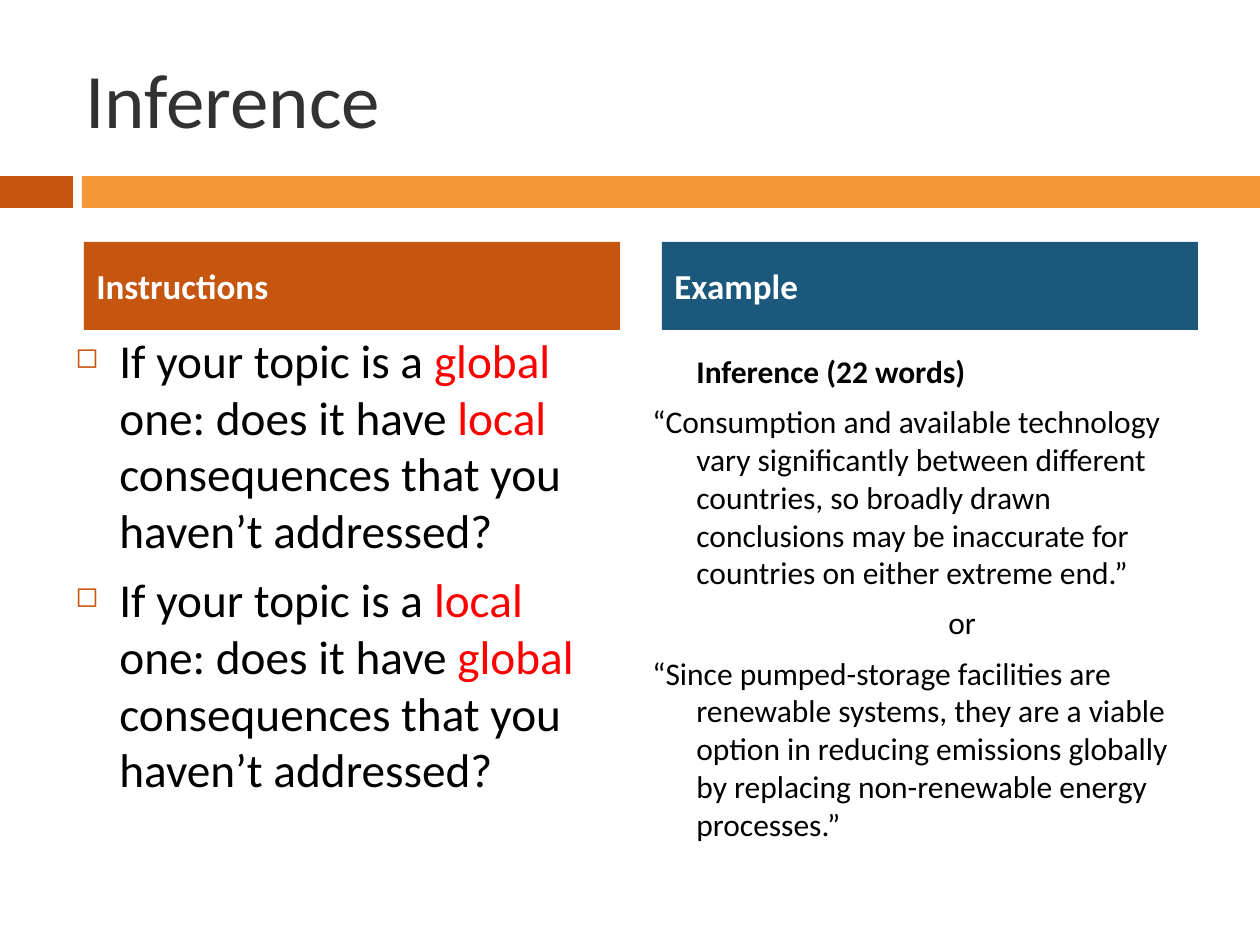
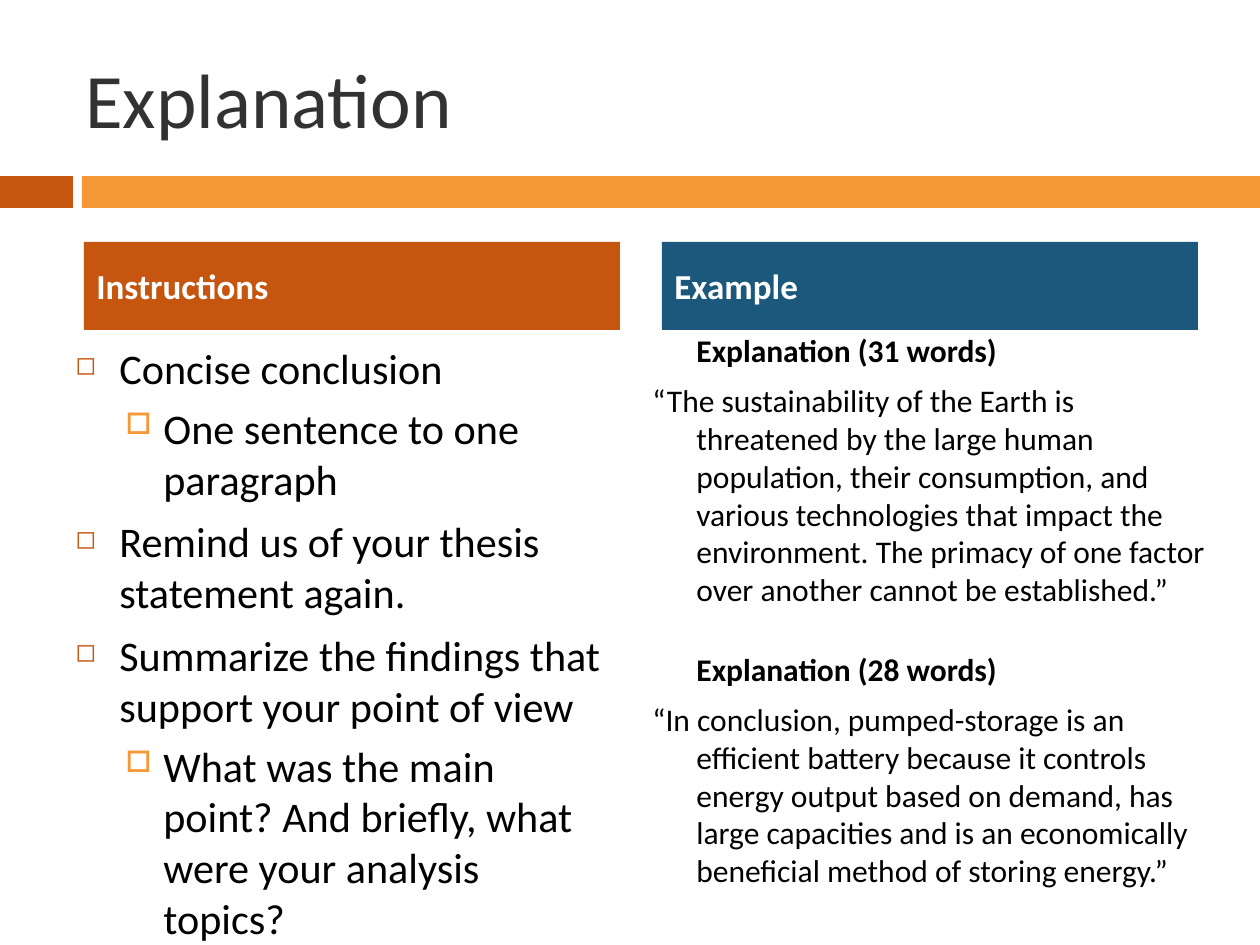
from lxml import etree
from pptx import Presentation
from pptx.dml.color import RGBColor
from pptx.enum.shapes import MSO_SHAPE
from pptx.enum.text import MSO_ANCHOR
from pptx.oxml.ns import qn
from pptx.util import Pt

EMU_PER_PX = 914400 / 126
SLIDE_WIDTH, SLIDE_HEIGHT = 1260, 945
RECTANGLE = MSO_SHAPE.RECTANGLE
TOP, MIDDLE = MSO_ANCHOR.TOP, MSO_ANCHOR.MIDDLE

FONT = "Calibri"
RUST = RGBColor(0xC6, 0x55, 0x10)
ORANGE = RGBColor(0xF7, 0x98, 0x38)
BLUE = RGBColor(0x1B, 0x58, 0x7C)
CHARCOAL = RGBColor(0x32, 0x32, 0x32)
BLACK = RGBColor(0, 0, 0)
WHITE = RGBColor(0xFF, 0xFF, 0xFF)
RED = RGBColor(0xFF, 0, 0)

# Shared boxes: left, top, width, height in px
TITLE_BOX = (73, 38, 1124, 120)
BANDS = [((0, 176, 73, 32), RUST), ((82, 176, 1178, 32), ORANGE)]
HEADERS = [
    ("Instructions", (84, 242, 536, 88), RUST),
    ("Example", (662, 242, 536, 88), BLUE),
]

# Bullet levels: left margin, hanging indent, space before, character, colour, size %
BULLETS = [
    (44, 44, 7, "◻", RUST, 60),
    (88, 38, 5.5, "□", ORANGE, 70),
]

# Example paragraph styles: left margin, hanging indent, space before, bold
EXAMPLE_STYLES = {
    "heading": (44, 0, 7, True),
    "next heading": (44, 0, 24, True),
    "quote": (44, 44, 7, False),
    "or": (296, 0, 7, False),
}


def px(length):
    return round(length * EMU_PER_PX)


def add_rectangle(slide, box, color):
    shape = slide.shapes.add_shape(RECTANGLE, *map(px, box))
    shape.shadow.inherit = False
    shape.fill.solid()
    shape.fill.fore_color.rgb = color
    shape.line.fill.background()
    return shape


def add_text_frame(slide, box, anchor=TOP):
    frame = slide.shapes.add_textbox(*map(px, box)).text_frame
    frame.word_wrap = True
    frame.vertical_anchor = anchor
    return frame


def next_paragraph(frame, index):
    return frame.add_paragraph() if index else frame.paragraphs[0]


def set_font(paragraph, size, color, bold=False):
    font = paragraph.font
    font.name, font.size, font.bold = FONT, Pt(size), bold
    font.color.rgb = color


def set_indent(paragraph, margin, hanging, space_before):
    paragraph.space_before = Pt(space_before)
    properties = paragraph._p.get_or_add_pPr()
    properties.set("marL", str(px(margin)))
    properties.set("indent", str(-px(hanging)))


def set_bullet(paragraph, character, color, percent):
    properties = paragraph._p.get_or_add_pPr()
    bullet_color = etree.SubElement(properties, qn("a:buClr"))
    etree.SubElement(bullet_color, qn("a:srgbClr"), val=str(color))
    etree.SubElement(properties, qn("a:buSzPct"), val=str(percent * 1000))
    etree.SubElement(properties, qn("a:buChar"), char=character)


def add_frame(slide, title):
    """Bands, title and the two column headers."""
    for box, color in BANDS:
        add_rectangle(slide, box, color)

    paragraph = add_text_frame(slide, TITLE_BOX, MIDDLE).paragraphs[0]
    paragraph.text = title
    set_font(paragraph, 44, CHARCOAL)

    for label, box, color in HEADERS:
        frame = add_rectangle(slide, box, color).text_frame
        frame.vertical_anchor = MIDDLE
        paragraph = frame.paragraphs[0]
        paragraph.text = label
        set_indent(paragraph, 0, 0, 5.8)
        paragraph.alignment = 1
        set_font(paragraph, 20, WHITE, bold=True)


def add_instructions(slide, box, size, items):
    """Bulleted list; each item is a level and pieces, every second piece red."""
    frame = add_text_frame(slide, box)
    for index, (level, *pieces) in enumerate(items):
        margin, hanging, space_before, character, color, percent = BULLETS[level]
        paragraph = next_paragraph(frame, index)
        paragraph.level = level
        set_indent(paragraph, margin, hanging, space_before)
        set_bullet(paragraph, character, color, percent)
        set_font(paragraph, size, BLACK)
        for position, piece in enumerate(pieces):
            run = paragraph.add_run()
            run.text = piece
            if position % 2:
                run.font.color.rgb = RED


def add_example(slide, box, items):
    """Headings and quotations with hanging indents."""
    frame = add_text_frame(slide, box)
    for index, (style, text) in enumerate(items):
        margin, hanging, space_before, bold = EXAMPLE_STYLES[style]
        paragraph = next_paragraph(frame, index)
        paragraph.text = text
        set_indent(paragraph, margin, hanging, space_before)
        set_font(paragraph, 18, BLACK, bold)


def add_inference_slide(slide):
    add_frame(slide, "Inference")
    add_instructions(slide, (63, 325, 557, 588), 27, [
        (0, "If your topic is a ", first, " one: does it have ", second,
         " consequences that you haven’t addressed?")
        for first, second in [("global", "local"), ("local", "global")]
    ])
    add_example(slide, (640, 346, 557, 557), [
        ("heading", "Inference (22 words)"),
        ("quote", "“Consumption and available technology vary significantly between "
                  "different countries, so broadly drawn conclusions may be inaccurate "
                  "for countries on either extreme end.”"),
        ("or", "or"),
        ("quote", "“Since pumped-storage facilities are renewable systems, they are a "
                  "viable option in reducing emissions globally by replacing "
                  "non-renewable energy processes.”"),
    ])


def add_explanation_slide(slide):
    add_frame(slide, "Explanation")
    add_instructions(slide, (63, 336, 557, 577), 24.1, [
        (0, "Concise conclusion"),
        (1, "One sentence to one paragraph"),
        (0, "Remind us of your thesis statement again."),
        (0, "Summarize the findings that support your point of view"),
        (1, "What was the main point? And briefly, what were your analysis topics?"),
    ])
    add_example(slide, (640, 325, 588, 557), [
        ("heading", "Explanation (31 words)"),
        ("quote", "“The sustainability of the Earth is threatened by the large human "
                  "population, their consumption, and various technologies that impact "
                  "the environment. The primacy of one factor over another cannot be "
                  "established.”"),
        ("next heading", "Explanation (28 words)"),
        ("quote", "“In conclusion, pumped-storage is an efficient battery because it "
                  "controls energy output based on demand, has large capacities and is "
                  "an economically beneficial method of storing energy.”"),
    ])


def main():
    presentation = Presentation()
    presentation.slide_width = px(SLIDE_WIDTH)
    presentation.slide_height = px(SLIDE_HEIGHT)
    blank_layout = presentation.slide_layouts[6]
    for build_slide in (add_inference_slide, add_explanation_slide):
        build_slide(presentation.slides.add_slide(blank_layout))
    presentation.save("out.pptx")


if __name__ == "__main__":
    main()
